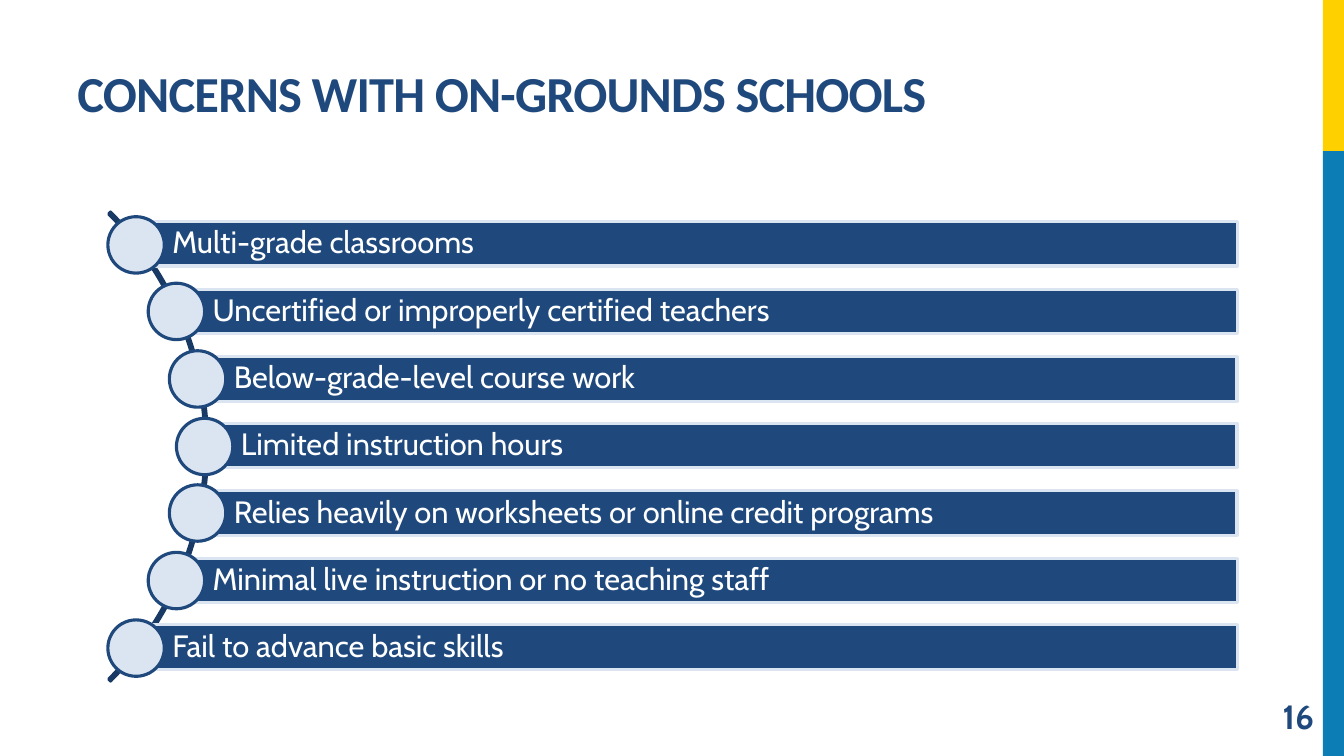
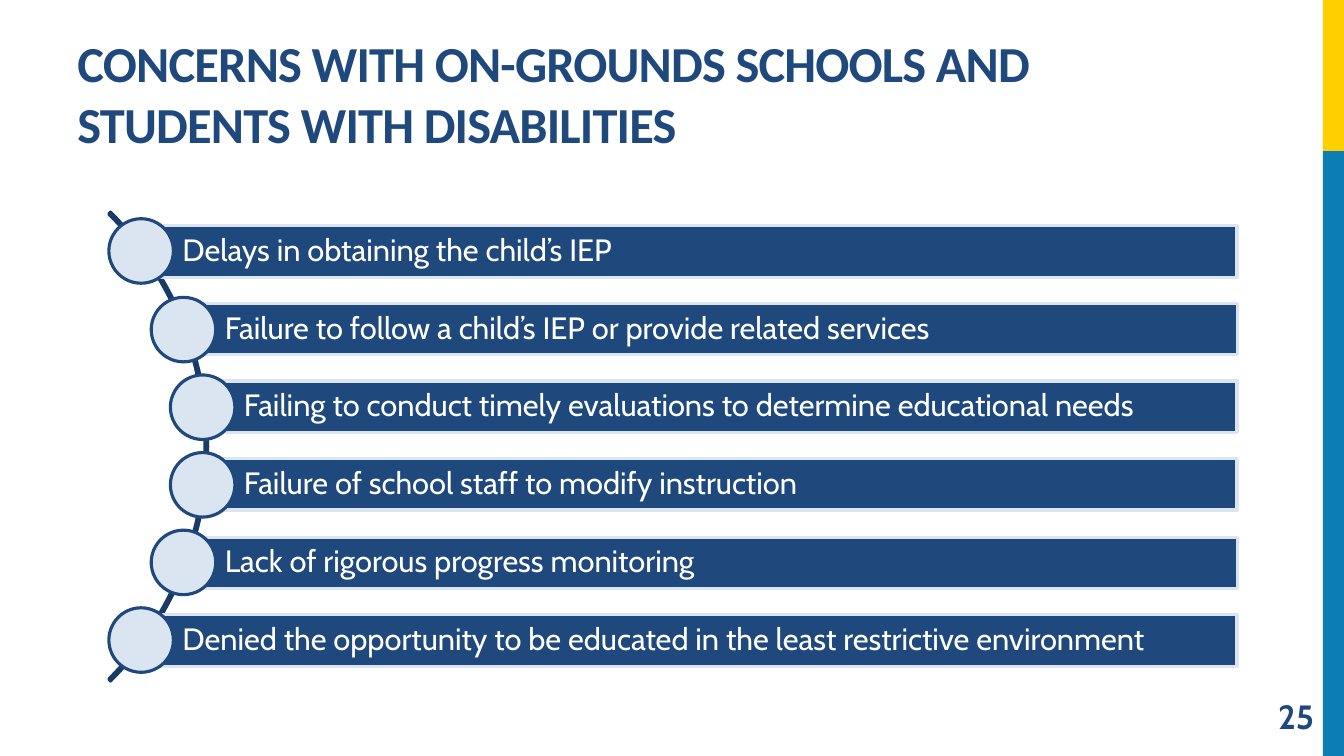
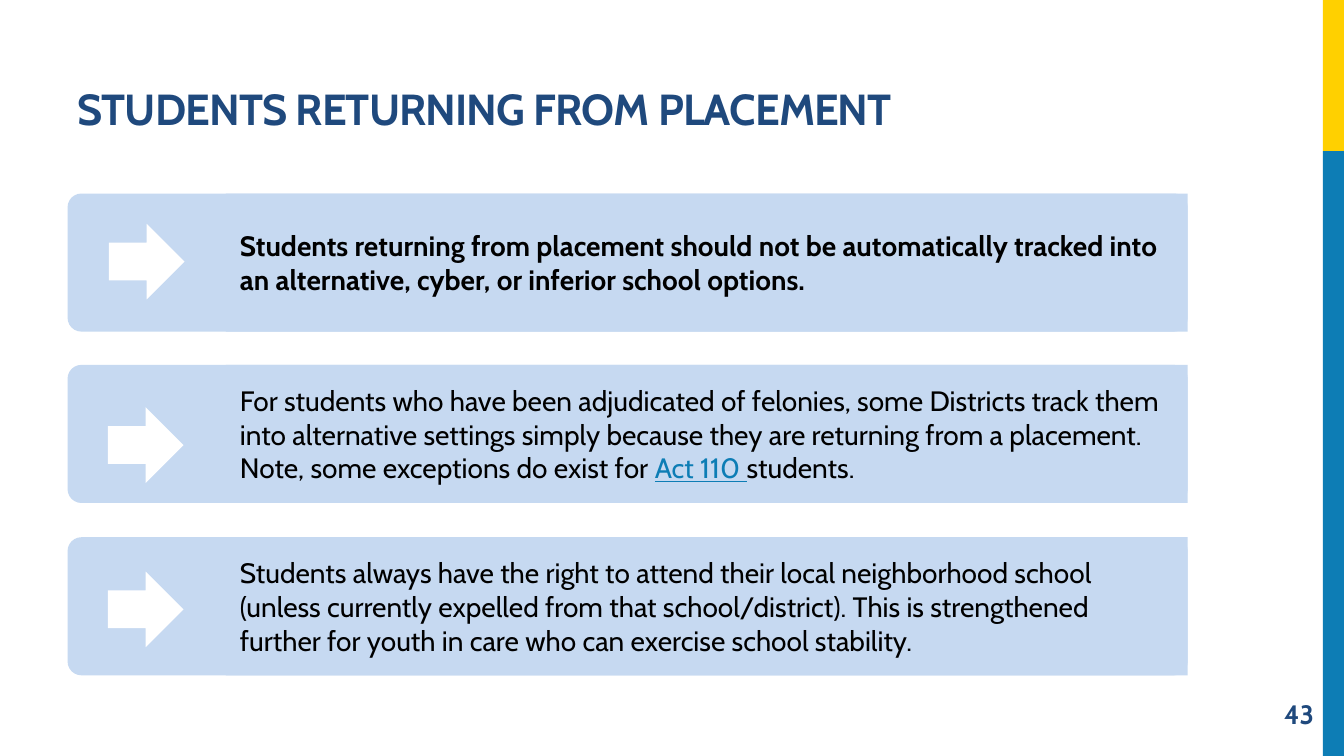
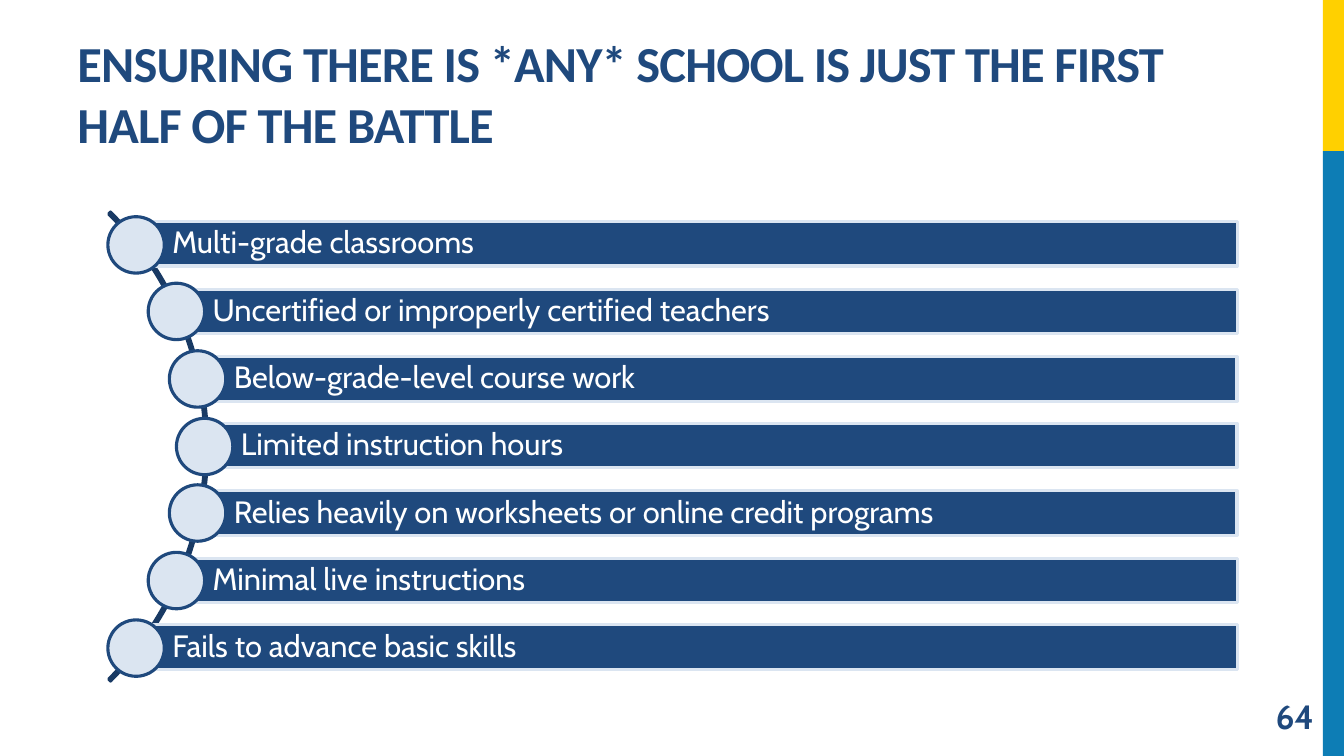
import math
from dataclasses import dataclass

import pptx
import pptx.dml.color
import pptx.enum.shapes
import pptx.enum.text
import pptx.util

SHAPE = pptx.enum.shapes.MSO_SHAPE
ALIGN = pptx.enum.text.PP_ALIGN
ANCHOR = pptx.enum.text.MSO_ANCHOR

EMU_PER_PX = 9144  # 100 px to the inch
SLIDE_W, SLIDE_H = 1333, 750


@dataclass(frozen=True)
class Theme:
    navy: str = "1F497D"
    arc: str = "193A64"
    pale: str = "DBE5F1"
    card: str = "C6D9F1"
    yellow: str = "FFD000"
    blue: str = "0D7DB5"
    white: str = "FFFFFF"
    black: str = "000000"
    body_font: str = "Cabin"
    title_font: str = "Calibri"
    title_size: int = 36
    small_title_size: int = 31
    bar_size: int = 22
    card_size: int = 20
    number_size: int = 24
    small_number_size: int = 19
    line: float = 2.25


THEME = Theme()


def px(n):
    return pptx.util.Emu(round(n) * EMU_PER_PX)


def rgb(value):
    return pptx.dml.color.RGBColor.from_string(value)


def shape(slide, kind, box, fill=None, line=None):
    sp = slide.shapes.add_shape(kind, *map(px, box))
    sp.shadow.inherit = False
    if fill:
        sp.fill.solid()
        sp.fill.fore_color.rgb = rgb(fill)
    else:
        sp.fill.background()
    if line:
        sp.line.color.rgb = rgb(line)
        sp.line.width = pptx.util.Pt(THEME.line)
    else:
        sp.line.fill.background()
    return sp


def write(sp, text, size, color, font=THEME.body_font, bold=False, align=ALIGN.LEFT,
          anchor=ANCHOR.MIDDLE, insets=(10, 5, 10, 5), leading=1.0, tracking=None):
    """Fill sp with one paragraph; text is a string or a list of (text, link style) runs."""
    tf = sp.text_frame
    tf.word_wrap = True
    tf.vertical_anchor = anchor
    tf.margin_left, tf.margin_top, tf.margin_right, tf.margin_bottom = map(px, insets)
    p = tf.paragraphs[0]
    p.alignment = align
    p.line_spacing = leading
    for content, linked in [(text, False)] if isinstance(text, str) else text:
        r = p.add_run()
        r.text = content
        r.font.name = font
        r.font.size = pptx.util.Pt(size)
        r.font.bold = bold
        r.font.underline = linked
        r.font.color.rgb = rgb(THEME.blue if linked else color)
        if tracking:
            r.font._element.set("spc", str(tracking))


def add_frame(prs, title, number, title_box, number_size=THEME.number_size,
              number_leading=1.0, **title_format):
    """Add a slide with the side bands, title and page number."""
    slide = prs.slides.add_slide(prs.slide_layouts[6])
    band_x, split = 1312, 150
    band_w = SLIDE_W - band_x
    shape(slide, SHAPE.RECTANGLE, (band_x, 0, band_w, split), THEME.yellow)
    shape(slide, SHAPE.RECTANGLE, (band_x, split, band_w, SLIDE_H - split), THEME.blue)
    style = dict(size=THEME.title_size, font=THEME.title_font) | title_format
    write(slide.shapes.add_textbox(*map(px, title_box)), title,
          color=THEME.navy, bold=True, tracking=-60, **style)
    write(slide.shapes.add_textbox(*map(px, (1121, 690, 192, 40))), str(number),
          number_size, THEME.navy, bold=True, align=ALIGN.RIGHT, leading=number_leading)
    return slide


def add_curved_list(slide, box, items):
    """Bars whose round markers follow an arc; gaps are half a bar high."""
    x, y, w, h = box
    radius = 329
    center_x, center_y = x - 223, y + h / 2
    arc = shape(slide, SHAPE.BLOCK_ARC,
                (center_x - radius, center_y - radius, 2 * radius, 2 * radius), line=THEME.arc)
    for i, value in enumerate((189, 27, 0.004)):
        arc.adjustments[i] = value

    bar_h = h / (1.5 * len(items) + 0.5)
    dot = 1.25 * bar_h
    for i, item in enumerate(items):
        middle = y + bar_h * (1 + 1.5 * i)
        bar_x = center_x - 3 + math.sqrt(radius ** 2 - (middle - center_y) ** 2)
        bar = shape(slide, SHAPE.RECTANGLE,
                    (bar_x, middle - bar_h / 2, x + w - bar_x, bar_h), THEME.navy, THEME.pale)
        write(bar, item, THEME.bar_size, THEME.white,
              insets=(0.8 * bar_h, 6, 6, 6), leading=0.9)
        shape(slide, SHAPE.OVAL, (bar_x - dot / 2, middle - dot / 2, dot, dot),
              THEME.pale, THEME.navy)


def add_arrow_card(slide, box, text, arrow_at, bold=False):
    """Card rounded on the left, with an arrow placed from its top left corner."""
    x, y, w, h = box
    text_x, arrow = 157, 75
    card = shape(slide, SHAPE.ROUNDED_RECTANGLE, box, THEME.card)
    card.adjustments[0] = 0.1
    body = shape(slide, SHAPE.RECTANGLE, (x + text_x, y, w - text_x, h), THEME.card)
    write(body, text, THEME.card_size, THEME.black, bold=bold, insets=(14,) * 4)
    dx, dy = arrow_at
    shape(slide, SHAPE.RIGHT_ARROW, (x + dx, y + dy, arrow, arrow), THEME.white)


def list_slide(prs, title, number, items, title_w=1151):
    slide = add_frame(prs, title, number, (67, 17, title_w, 150))
    add_curved_list(slide, (100, 198, 1127, 489), items)


def card_slide(prs, title, number, cards):
    slide = add_frame(prs, title, number, (67, 17, 1163, 122),
                      number_size=THEME.small_number_size, number_leading=0.9,
                      size=THEME.small_title_size, font=THEME.body_font,
                      anchor=ANCHOR.BOTTOM, leading=0.9)
    for i, (text, arrow_at, bold) in enumerate(cards):
        add_arrow_card(slide, (67, 192 + 170.5 * i, 1111, 137), text, arrow_at, bold)


def main():
    prs = pptx.Presentation()
    prs.slide_width, prs.slide_height = px(SLIDE_W), px(SLIDE_H)
    shared_concerns = [
        "Multi-grade classrooms",
        "Uncertified or improperly certified teachers",
        "Below-grade-level course work",
        "Limited instruction hours",
        "Relies heavily on worksheets or online credit programs",
    ]
    list_slide(prs, "CONCERNS WITH ON-GROUNDS SCHOOLS", 16, shared_concerns + [
        "Minimal live instruction or no teaching staff",
        "Fail to advance basic skills",
    ])
    list_slide(prs, "CONCERNS WITH ON-GROUNDS SCHOOLS AND STUDENTS WITH DISABILITIES", 25, [
        "Delays in obtaining the child’s IEP",
        "Failure to follow a child’s IEP or provide related services",
        "Failing to conduct timely evaluations to determine educational needs",
        "Failure of school staff to modify instruction",
        "Lack of rigorous progress monitoring",
        "Denied the opportunity to be educated in the least restrictive environment",
    ], title_w=1076)
    card_slide(prs, "STUDENTS RETURNING FROM PLACEMENT", 43, [
        ("Students returning from placement should not be automatically tracked into an "
         "alternative, cyber, or inferior school options.", (41, 30), True),
        ([("For students who have been adjudicated of felonies, some Districts track them into "
           "alternative settings simply because they are returning from a placement. Note, "
           "some exceptions do exist for ", False),
          ("Act 110 ", True), ("students.", False)], (40, 42), False),
        ("Students always have the right to attend their local neighborhood school (unless "
         "currently expelled from that school/district). This is strengthened further for "
         "youth in care who can exercise school stability.", (40, 34), False),
    ])
    list_slide(prs, "ENSURING THERE IS *ANY* SCHOOL IS JUST THE FIRST HALF OF THE BATTLE", 64,
               shared_concerns + ["Minimal live instructions", "Fails to advance basic skills"])
    prs.save("out.pptx")


if __name__ == "__main__":
    main()
